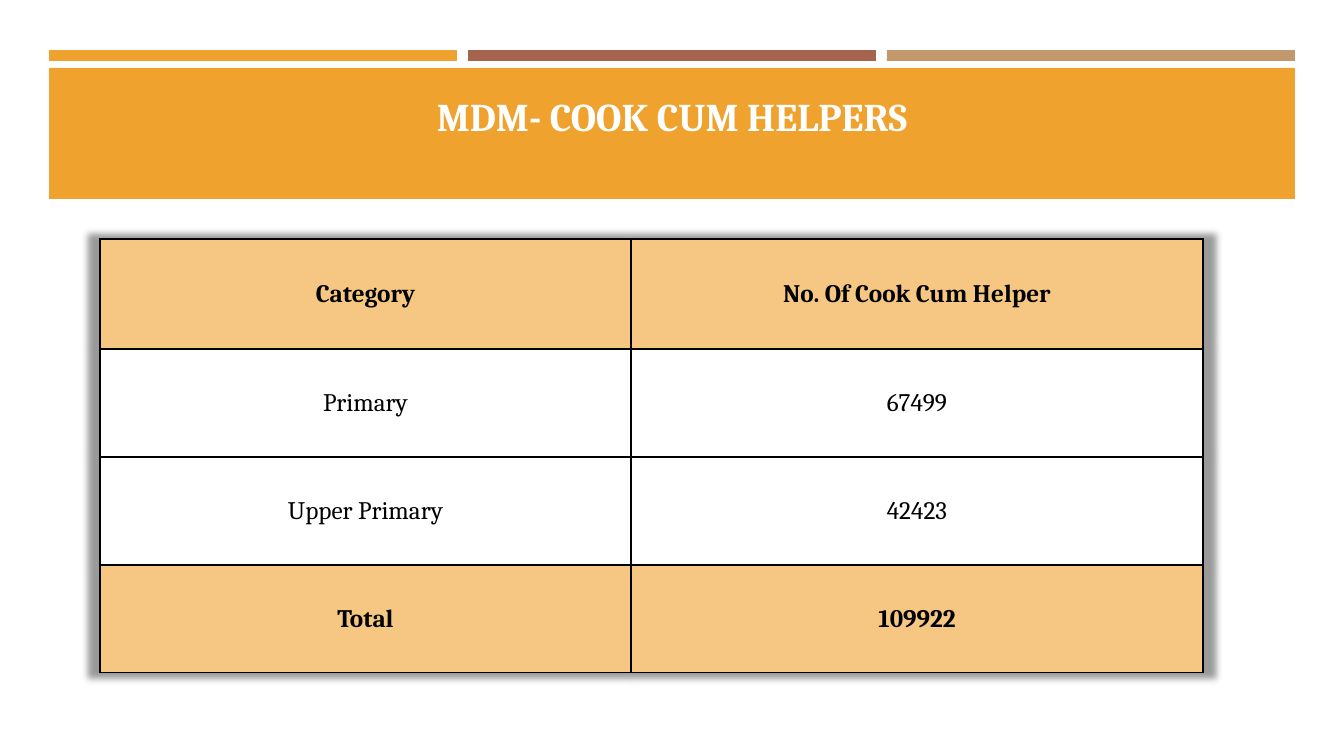
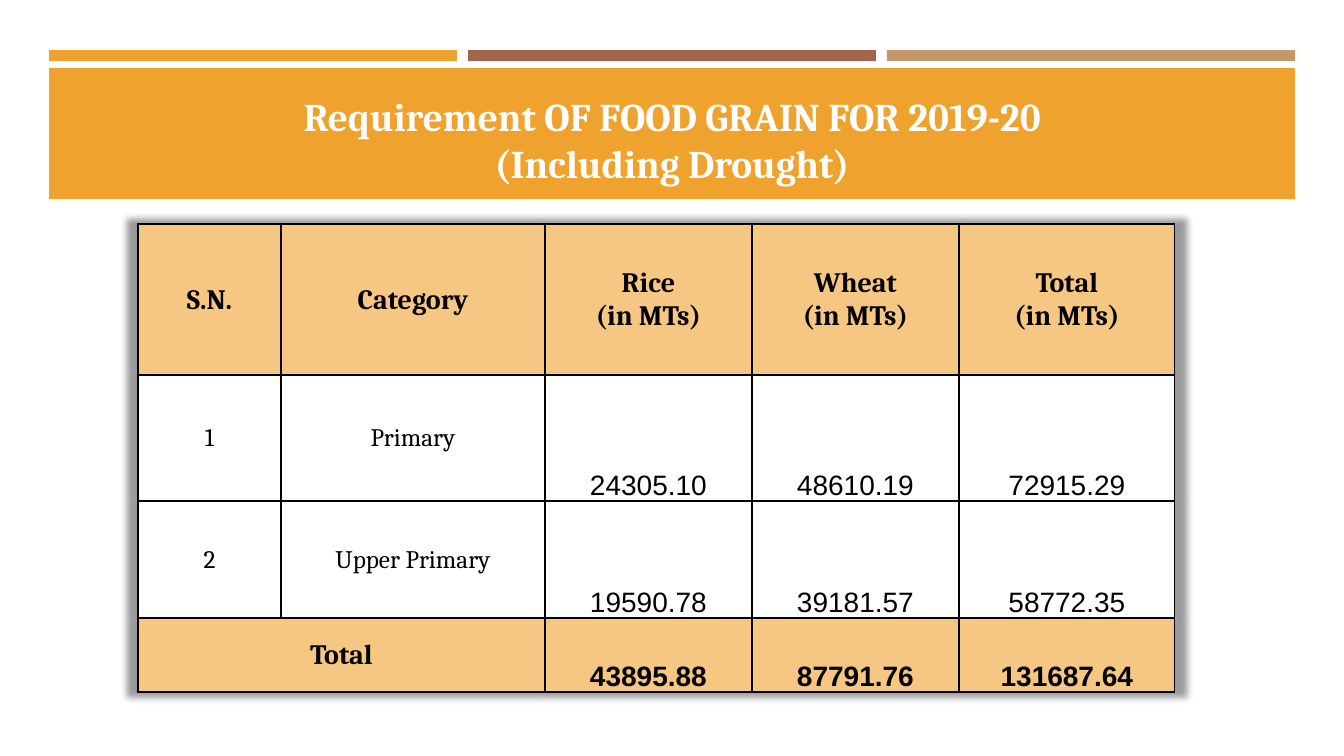
from lxml.etree import SubElement
from pptx import Presentation
from pptx.dml.color import RGBColor
from pptx.enum.shapes import MSO_SHAPE
from pptx.enum.text import MSO_ANCHOR, MSO_AUTO_SIZE, PP_ALIGN
from pptx.oxml import parse_xml
from pptx.oxml.ns import qn
from pptx.util import Pt

PX = 914400 / 100.8
NS = 'xmlns:a="http://schemas.openxmlformats.org/drawingml/2006/main"'
HUES = {"gold": "F0A22E", "rust": "A5644E", "tan": "C3986D",
        "pale": "F6C782", "white": "FFFFFF", "black": "000000"}
SHADOW = (f'<a:effectLst {NS}><a:outerShdw blurRad="63500" sx="102000" sy="102000" '
          'algn="ctr" rotWithShape="0"><a:srgbClr val="000000">'
          '<a:alpha val="40000"/></a:srgbClr></a:outerShdw></a:effectLst>')


def px(*vals):
    return [round(v * PX) for v in vals]


def write(frame, text, size=18, font="Cambria", hue="black", bold=False, gap=1.0):
    """Fill a text frame with centred text, one paragraph for each line."""
    frame.text = text
    for para in frame.paragraphs:
        para.alignment = PP_ALIGN.CENTER
        para.line_spacing = gap
        for run in para.runs:
            run.font.size = Pt(size)
            run.font.name = font
            run.font.bold = bold
            run.font.color.rgb = RGBColor.from_string(HUES[hue])


deck = Presentation()
deck.slide_width, deck.slide_height = px(1344, 756)
layout = deck.slide_layouts[5]

pages = [
    {"title": "MDM- COOK CUM HELPERS",
     "at": (100, 239), "cols": [531, 572], "rows": [110, 108, 108, 108],
     "head": 18, "sum": 18, "nums": 2,
     "data": [["Category", "No. Of Cook Cum Helper"],
              ["Primary", "67499"],
              ["Upper Primary", "42423"],
              ["Total", "109922"]]},
    {"title": "Requirement OF FOOD GRAIN FOR 2019-20\v(Including Drought)",
     "at": (138, 224), "cols": [143, 264, 207, 207, 216], "rows": [151, 126, 117, 74],
     "head": 20, "sum": 20, "nums": 2,
     "data": [["S.N.", "Category", "Rice\n(in MTs)", "Wheat\n(in MTs)", "Total\n(in MTs)"],
              ["1", "Primary", "24305.10", "48610.19", "72915.29"],
              ["2", "Upper Primary", "19590.78", "39181.57", "58772.35"],
              ["Total", "", "43895.88", "87791.76", "131687.64"]]},
]
slides = [deck.slides.add_slide(layout) for page in pages]

# Bands shared by all slides: drawn once, then moved into the layout
bands = [(49 + i * 419, 50, 408, 11, hue) for i, hue in enumerate(["gold", "rust", "tan"])]
bands.append((49, 68, 1246, 131, "gold"))
for *box, hue in bands:
    band = slides[0].shapes.add_shape(MSO_SHAPE.RECTANGLE, *px(*box))
    band.shadow.inherit = False
    band.fill.solid()
    band.fill.fore_color.rgb = RGBColor.from_string(HUES[hue])
    band.line.fill.background()
    layout.shapes.element.insert(2, band.element)

name = layout.placeholders[0]
name.left, name.top, name.width, name.height = px(64, 78, 1216, 112)

for slide, page in zip(slides, pages):
    frame = slide.shapes.title.text_frame
    write(frame, page["title"], size=28, hue="white", bold=True)
    frame.auto_size = MSO_AUTO_SIZE.NONE
    frame.vertical_anchor = MSO_ANCHOR.TOP
    frame.margin_top = px(14)[0]

    data, cols, rows = page["data"], page["cols"], page["rows"]
    table = slide.shapes.add_table(len(rows), len(cols),
                                   *px(*page["at"], sum(cols), sum(rows))).table
    table.first_row = table.horz_banding = False
    table._tbl.tblPr.insert(0, parse_xml(SHADOW))
    for col, wide in zip(table.columns, px(*cols)):
        col.width = wide
    for row, high in zip(table.rows, px(*rows)):
        row.height = high

    for r, line in enumerate(data):
        head, total = r == 0, r == len(data) - 1
        for c, text in enumerate(line):
            cell = table.cell(r, c)
            figure = c >= page["nums"] and not head
            size = page["head"] if head else page["sum"] if total else 20 if figure else 18
            write(cell.text_frame, text, size=size, bold=head or total,
                  font="Arial" if figure else "Cambria", gap=1.5 if figure else 1.0)
            cell.vertical_anchor = MSO_ANCHOR.BOTTOM if figure else MSO_ANCHOR.MIDDLE
            cell.margin_left = cell.margin_right = cell.margin_top = px(1)[0]
            cell.margin_bottom = 0
            cell.fill.solid()
            cell.fill.fore_color.rgb = RGBColor.from_string(
                HUES["pale" if head or total else "white"])
            props = cell._tc.get_or_add_tcPr()
            for i, side in enumerate(["lnL", "lnR", "lnT", "lnB"]):
                edge = parse_xml(f'<a:{side} {NS} w="12700"/>')
                ink = SubElement(edge, qn("a:solidFill"))
                SubElement(ink, qn("a:srgbClr"), val=HUES["black"])
                props.insert(i, edge)
            if c and not text:
                table.cell(r, c - 1).merge(cell)

deck.save("out.pptx")
